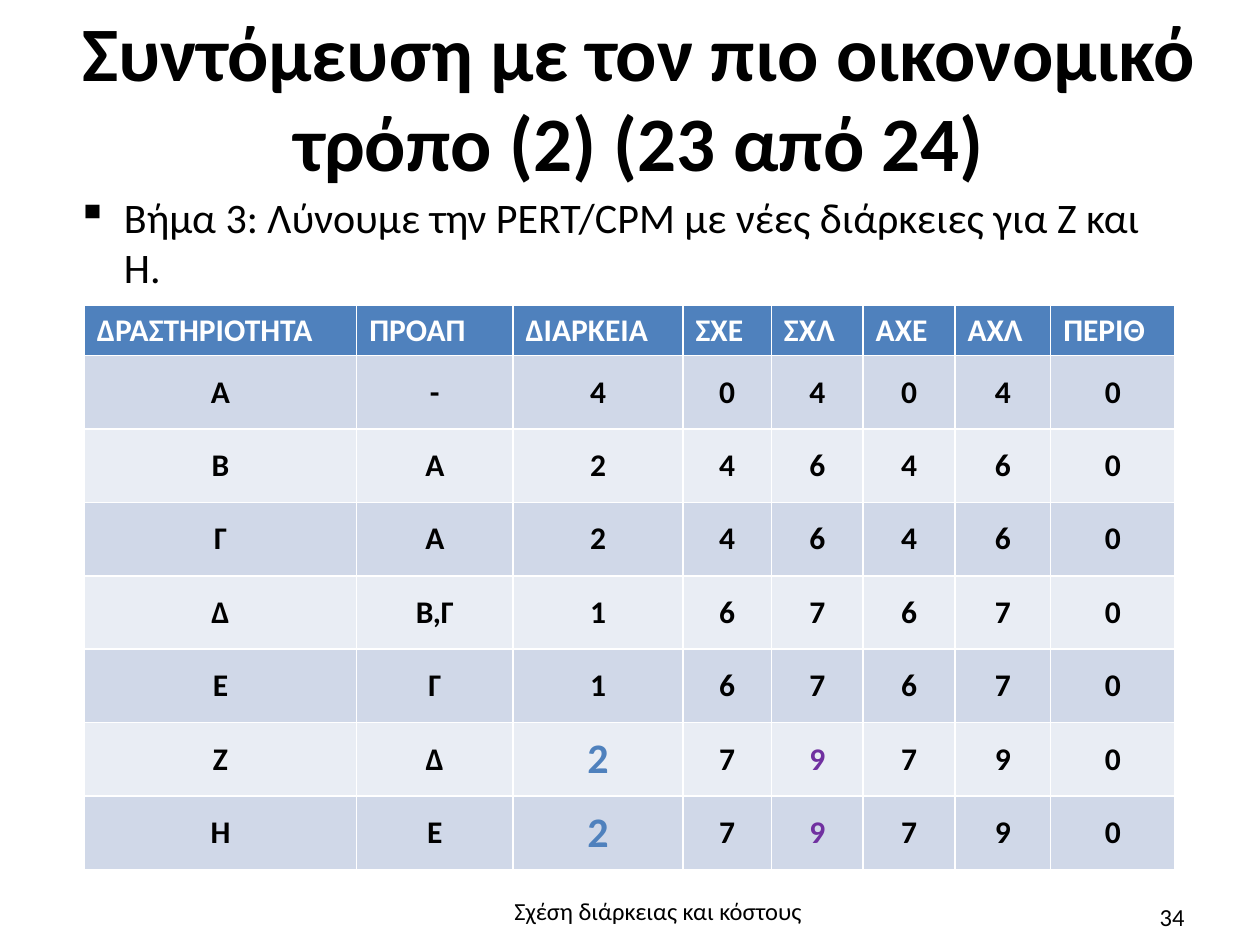
from lxml.etree import SubElement
from pptx import Presentation
from pptx.dml.color import RGBColor
from pptx.enum.text import MSO_ANCHOR, PP_ALIGN
from pptx.oxml.ns import qn
from pptx.util import Cm, Pt

# Content
TITLE = "Συντόμευση με τον πιο οικονομικό τρόπο (2) (23 από 24)"
STEP = "Βήμα 3: Λύνουμε την PERT/CPM με νέες διάρκειες για Ζ και Η."
FOOTER = "Σχέση διάρκειας και κόστους"
PAGE = "34"
HEADER = ["ΔΡΑΣΤΗΡΙΟΤΗΤΑ", "ΠΡΟΑΠ", "ΔΙΑΡΚΕΙΑ", "ΣΧΕ", "ΣΧΛ", "ΑΧΕ", "ΑΧΛ", "ΠΕΡΙΘ"]
ACTIVITIES = [
    ["Α", "-", "4", "0", "4", "0", "4", "0"],
    ["Β", "Α", "2", "4", "6", "4", "6", "0"],
    ["Γ", "Α", "2", "4", "6", "4", "6", "0"],
    ["Δ", "Β,Γ", "1", "6", "7", "6", "7", "0"],
    ["Ε", "Γ", "1", "6", "7", "6", "7", "0"],
    ["Ζ", "Δ", "2", "7", "9", "7", "9", "0"],
    ["Η", "Ε", "2", "7", "9", "7", "9", "0"],
]
COLORS = {
    "text": "000000", "head_text": "FFFFFF", "head": "4F81BD",
    "odd": "D0D8E8", "even": "E9EDF4",
    "duration": "4F81BD", "finish": "7030A0",
}
# Format of the changed cells, by column, in the rows of the shortened activities
SHORTENED = ("Ζ", "Η")
CHANGED = {2: {"size": 24, "color": "duration"}, 4: {"color": "finish"}}

# Table grid in cm
COL_WIDTHS = [5.49, 3.15, 3.43, 1.78, 1.85, 1.85, 1.93, 2.51]
HEAD_HEIGHT, ROW_HEIGHT = 1, 1.48


def write(tf, text, size=18, color="text", bold=False, align=PP_ALIGN.LEFT):
    p = tf.paragraphs[0]
    p.alignment = align
    r = p.add_run()
    r.text = text
    r.font.name = "Calibri"
    r.font.size = Pt(size)
    r.font.bold = bold
    r.font.color.rgb = RGBColor.from_string(COLORS[color])
    return p


def add_text(slide, box, text, **fmt):
    tf = slide.shapes.add_textbox(*(Cm(v) for v in box)).text_frame
    tf.word_wrap = True
    return write(tf, text, **fmt)


def fill_cell(cell, fill, text, **fmt):
    cell.fill.solid()
    cell.fill.fore_color.rgb = RGBColor.from_string(COLORS[fill])
    write(cell.text_frame, text, bold=True, **fmt)


prs = Presentation()
prs.slide_width, prs.slide_height = Cm(25.4), Cm(19.05)
slide = prs.slides.add_slide(prs.slide_layouts[5])

# Title
title = slide.shapes.title
title.left, title.top, title.width, title.height = Cm(1.3), Cm(0.23), Cm(23.19), Cm(3.5)
tf = title.text_frame
tf.margin_left = tf.margin_right = tf.margin_bottom = 0
tf.margin_top = Cm(0.05)
tf.vertical_anchor = MSO_ANCHOR.MIDDLE
p = write(tf, TITLE, size=44, bold=True, align=PP_ALIGN.CENTER)
p.line_spacing = 0.98

# Bulleted step
p = add_text(slide, (1.3, 3.73, 22.83, 2.31), STEP, size=24)
pPr = p._p.get_or_add_pPr()
pPr.set("marL", str(Cm(0.95)))
pPr.set("indent", str(-Cm(0.95)))
SubElement(pPr, qn("a:buChar")).set("char", "▪")

# Activity table
table = slide.shapes.add_table(
    len(ACTIVITIES) + 1, len(HEADER), Cm(1.7), Cm(6.15),
    Cm(sum(COL_WIDTHS)), Cm(HEAD_HEIGHT + ROW_HEIGHT * len(ACTIVITIES))).table
for column, width in zip(table.columns, COL_WIDTHS):
    column.width = Cm(width)
for i, row in enumerate(table.rows):
    row.height = Cm(ROW_HEIGHT if i else HEAD_HEIGHT)
for j, name in enumerate(HEADER):
    fill_cell(table.cell(0, j), "head", name, color="head_text")
for i, activity in enumerate(ACTIVITIES, 1):
    formats = CHANGED if activity[0] in SHORTENED else {}
    for j, value in enumerate(activity):
        cell = table.cell(i, j)
        cell.vertical_anchor = MSO_ANCHOR.MIDDLE
        fill_cell(cell, "odd" if i % 2 else "even", value,
                  align=PP_ALIGN.CENTER, **formats.get(j, {}))

# Footer and page number
add_text(slide, (8.84, 17.93, 8.86, 1.1), FOOTER, size=14, align=PP_ALIGN.CENTER)
add_text(slide, (18.21, 18.06, 5.92, 0.99), PAGE, size=14, align=PP_ALIGN.RIGHT)

prs.save("out.pptx")
